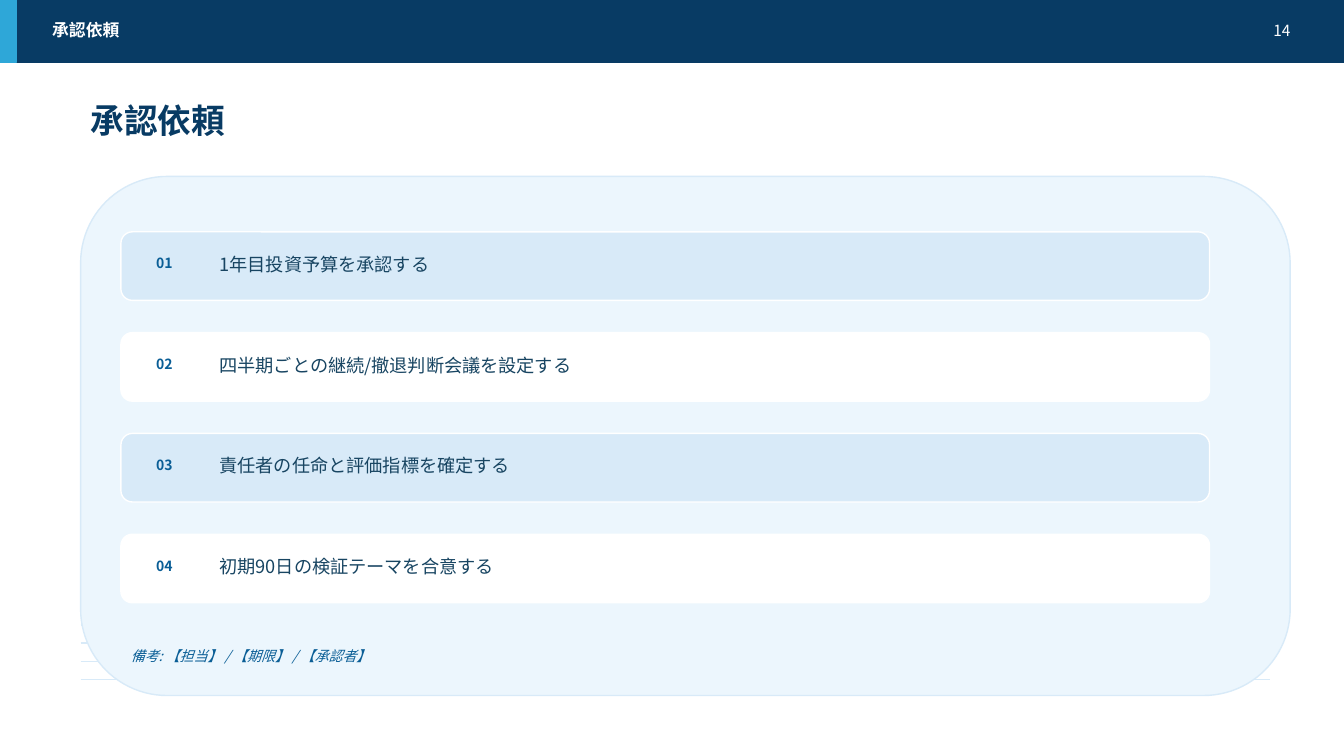
from pptx import Presentation
from pptx.dml.color import RGBColor
from pptx.enum.shapes import MSO_CONNECTOR, MSO_SHAPE
from pptx.enum.text import MSO_ANCHOR, PP_ALIGN
from pptx.oxml.ns import qn
from pptx.util import Pt
from lxml.etree import SubElement

NAVY, SKY, BLUE, INK = "083B64", "2EA7D8", "0A5E96", "184562"
PALE, ICE, WHITE = "D8EAF8", "ECF6FD", "FFFFFF"
STEPS = [
    "1年目投資予算を承認する",
    "四半期ごとの継続/撤退判断会議を設定する",
    "責任者の任命と評価指標を確定する",
    "初期90日の検証テーマを合意する",
]


def color(code):
    return RGBColor.from_string(code)


def write(frame, text, size=10, face="Noto Sans CJK JP", ink=WHITE,
          bold=False, slant=False, align=PP_ALIGN.LEFT):
    para = frame.paragraphs[0]
    para.alignment = align
    run = para.add_run()
    run.text = text
    font = run.font
    font.size, font.name = Pt(size), face
    font.bold, font.italic = bold, slant
    font.color.rgb = color(ink)
    SubElement(run._r.get_or_add_rPr(), qn("a:ea"), typeface=face)


class Page:
    def __init__(self, slide, width=1):
        self.shapes = slide.shapes
        self.width = Pt(width)

    def rule(self, left, right, top, ink=PALE):
        line = self.shapes.add_connector(
            MSO_CONNECTOR.STRAIGHT, Pt(left), Pt(top), Pt(right), Pt(top))
        line.line.color.rgb = color(ink)
        line.line.width = self.width
        SubElement(line._element.spPr, qn("a:effectLst"))

    def block(self, left, top, width, height, fill, edge, kind=MSO_SHAPE.RECTANGLE):
        shape = self.shapes.add_shape(
            kind, Pt(left), Pt(top), Pt(width), Pt(height))
        shape.shadow.inherit = False
        shape.fill.solid()
        shape.fill.fore_color.rgb = color(fill)
        shape.line.color.rgb = color(edge)
        shape.line.width = self.width

    def card(self, left, top, width, height, fill, edge):
        self.block(left, top, width, height, fill, edge, MSO_SHAPE.ROUNDED_RECTANGLE)

    def label(self, left, top, width, height, text, **style):
        box = self.shapes.add_textbox(Pt(left), Pt(top), Pt(width), Pt(height))
        frame = box.text_frame
        frame.word_wrap = True
        frame.vertical_anchor = MSO_ANCHOR.MIDDLE
        write(frame, text, **style)


def main():
    deck = Presentation()
    deck.slide_width, deck.slide_height = Pt(960), Pt(540)
    page = Page(deck.slides.add_slide(deck.slide_layouts[6]))

    for index in range(4):
        page.rule(57.6, 907.2, 446.4 + 12.96 * index)

    page.block(0, 0, 960, 44.64, NAVY, NAVY)
    page.block(0, 0, 11.52, 44.64, SKY, SKY)
    page.label(30.24, 12.24, 633.6, 18.72, "承認依頼", size=12, bold=True)
    page.label(874.8, 12.24, 54, 18.72, "14", size=11, align=PP_ALIGN.RIGHT)
    page.label(57.6, 68.4, 820.8, 34.56, "承認依頼",
               size=24, face="Lato", ink=NAVY, bold=True)

    page.card(57.6, 126, 864, 370.8, ICE, PALE)
    for index, step in enumerate(STEPS):
        top = 165.6 + 72 * index
        page.card(86.4, top, 777.6, 48.96, WHITE if index % 2 else PALE, WHITE)
        page.label(104.4, top + 15.12, 31.68, 14.4, f"{index + 1:02}",
                   ink=BLUE, bold=True)
        page.label(149.76, top + 14.4, 691.2, 17.28, step, size=13, ink=INK)

    page.label(86.4, 460.8, 489.6, 15.84, "備考: 【担当】 / 【期限】 / 【承認者】",
               ink=BLUE, slant=True)
    deck.save("out.pptx")


if __name__ == "__main__":
    main()
